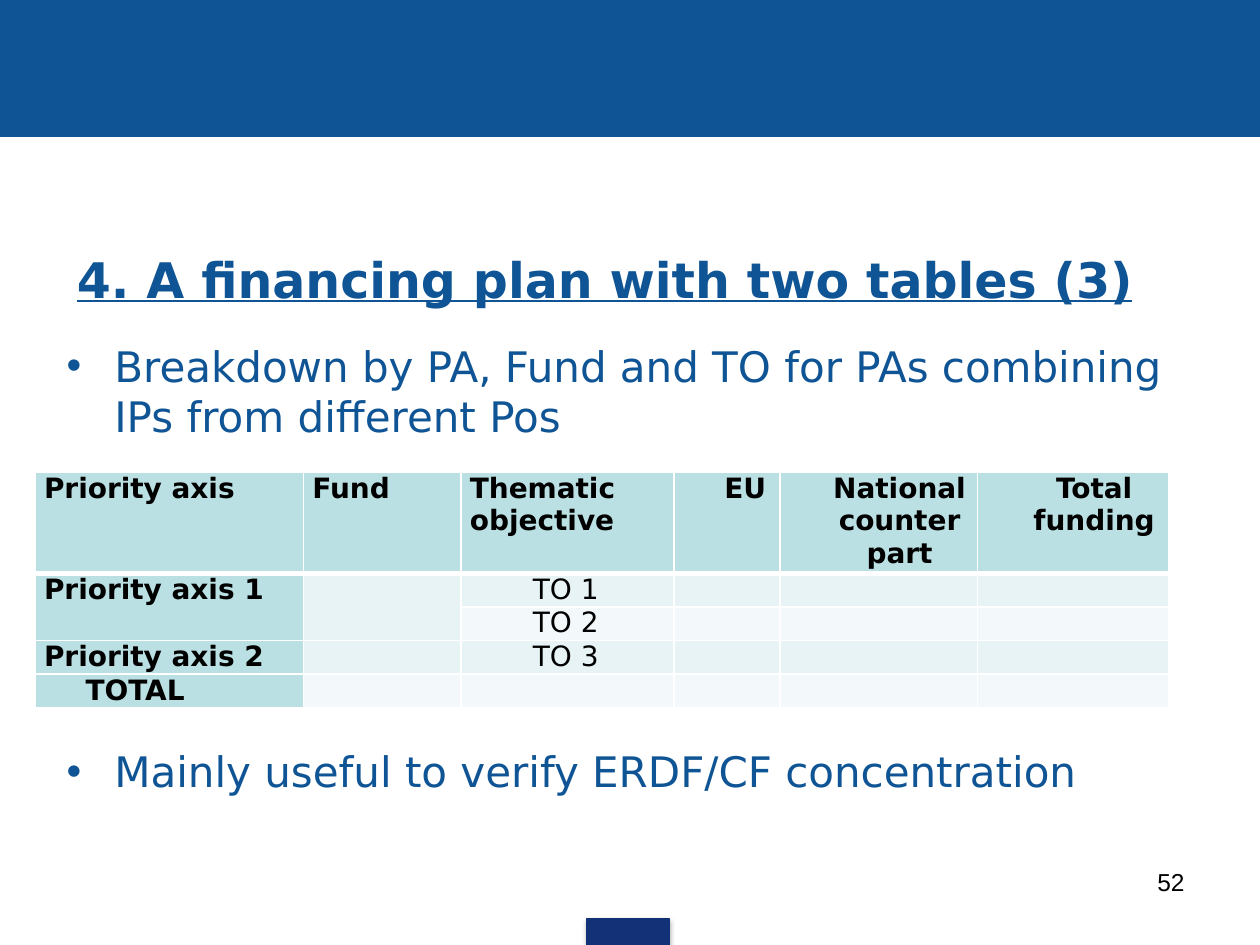
from typing import NamedTuple

import pptx
import pptx.dml.color
import pptx.enum.shapes
import pptx.enum.text
import pptx.oxml
import pptx.oxml.ns
import pptx.util
from lxml import etree

Inches = pptx.util.Inches
Pt = pptx.util.Pt
RGB = pptx.dml.color.RGBColor
Align = pptx.enum.text.PP_ALIGN
Anchor = pptx.enum.text.MSO_ANCHOR
qn = pptx.oxml.ns.qn
NS = pptx.oxml.ns.nsdecls("a")

BLUE = RGB(0x0F, 0x54, 0x94)
NAVY = RGB(0x13, 0x31, 0x76)
BLACK = RGB(0, 0, 0)
TEAL = RGB(0xBB, 0xE0, 0xE3)
PALE = RGB(0xE7, 0xF3, 0xF4)
FAINT = RGB(0xF3, 0xF9, 0xFA)
SANS = "DejaVu Sans"


class Bar(NamedTuple):
    left: float
    top: float
    width: float
    height: float
    color: RGB
    shadow: bool = False


class Entry(NamedTuple):
    text: str = ""
    indent: float = 0
    align: Align = Align.JUSTIFY


BARS = [
    Bar(0, 0, 10, 1.08, BLUE),
    Bar(4.66, 7.29, 0.65, 0.22, NAVY, True),
]
BULLETS = [
    ("Breakdown by PA, Fund and TO for PAs combining IPs from different Pos", 0),
    ("Mainly useful to verify ERDF/CF concentration", 174),
]
WIDTHS = [2.13, 1.25, 1.69, 0.84, 1.57, 1.52]
HEIGHTS = [0.78, 0.25, 0.26, 0.26, 0.25]
ROWS = [
    [Entry("Priority axis"), Entry("Fund"), Entry("Thematic objective", 0, Align.LEFT),
     Entry("EU", 0.33), Entry("National counterpart", 0.33, Align.CENTER),
     Entry("Total funding", 0.33, Align.CENTER)],
    [Entry("Priority axis 1"), Entry(), Entry("TO 1", 0.5)],
    [Entry(), Entry(), Entry("TO 2", 0.5)],
    [Entry("Priority axis 2"), Entry(), Entry("TO 3", 0.5)],
    [Entry("TOTAL", 0.33)],
]


def write(para, text: str, *, size: float, color: RGB = BLACK, font: str = SANS,
          bold: bool = False, line: bool = False, align: Align = Align.LEFT,
          indent: float = 0, hang: float = 0, before: float = 0,
          bullet: bool = False) -> None:
    props = para._p.get_or_add_pPr()
    props.set("marL", str(Inches(indent)))
    props.set("indent", str(-Inches(hang)))
    if bullet:
        props.append(pptx.oxml.parse_xml(
            f'<a:buClr {NS}><a:srgbClr val="{color}"/></a:buClr>'))
        props.append(pptx.oxml.parse_xml(f'<a:buFont {NS} typeface="Arial"/>'))
        props.append(pptx.oxml.parse_xml(f'<a:buChar {NS} char="•"/>'))
    para.alignment = align
    para.space_before = Pt(before)
    run = para.add_run()
    run.text = text
    run.font.size = Pt(size)
    run.font.name = font
    run.font.bold = bold
    run.font.underline = line
    run.font.color.rgb = color


def draw_bar(slide, bar: Bar) -> None:
    shape = slide.shapes.add_shape(
        pptx.enum.shapes.MSO_SHAPE.RECTANGLE,
        Inches(bar.left), Inches(bar.top), Inches(bar.width), Inches(bar.height))
    shape.fill.solid()
    shape.fill.fore_color.rgb = bar.color
    shape.line.color.rgb = bar.color
    shape.line.width = Pt(0.75)
    shape.shadow.inherit = False
    if bar.shadow:
        effects = shape._element.spPr.find(qn("a:effectLst"))
        effects.append(pptx.oxml.parse_xml(
            f'<a:outerShdw {NS} blurRad="{Pt(3.1)}" dist="{Pt(1.8)}" dir="5400000" '
            'rotWithShape="0"><a:srgbClr val="000000"><a:alpha val="35000"/>'
            '</a:srgbClr></a:outerShdw>'))


def add_box(slide, left: float, top: float, width: float, height: float):
    box = slide.shapes.add_textbox(
        Inches(left), Inches(top), Inches(width), Inches(height))
    box.text_frame.word_wrap = True
    return box.text_frame


def add_title(slide, text: str) -> None:
    title = slide.shapes.title
    title.left, title.top = Inches(0.51), Inches(1.75)
    title.width, title.height = Inches(9), Inches(0.93)
    frame = title.text_frame
    frame.auto_size = pptx.enum.text.MSO_AUTO_SIZE.NONE
    frame.vertical_anchor = Anchor.MIDDLE
    write(frame.paragraphs[0], text, size=28, color=BLUE, bold=True, line=True,
          indent=0.39, hang=0.39)


def set_edges(cell, top: float, bottom: float) -> None:
    props = cell._tc.get_or_add_tcPr()
    for side, width in (("L", 1), ("R", 1), ("T", top), ("B", bottom)):
        props.append(pptx.oxml.parse_xml(
            f'<a:ln{side} {NS} w="{Pt(width)}"><a:solidFill>'
            f'<a:srgbClr val="FFFFFF"/></a:solidFill></a:ln{side}>'))


def fill_cell(cell, entry: Entry, row: int, col: int) -> None:
    head = row == 0 or col == 0
    set_edges(cell, 3 if row == 1 else 1, 3 if row == 0 else 1)
    cell.fill.solid()
    cell.fill.fore_color.rgb = TEAL if head else PALE if row % 2 else FAINT
    cell.margin_left = cell.margin_right = Inches(0.07)
    cell.margin_top = cell.margin_bottom = 0
    para = cell.text_frame.paragraphs[0]
    if entry.text:
        write(para, entry.text, size=16, bold=head, align=entry.align,
              indent=entry.indent)
    else:
        # keeps an empty cell from stretching its row
        etree.SubElement(para._p, qn("a:endParaRPr"), sz="1200")


def add_plan(slide) -> None:
    table = slide.shapes.add_table(
        len(ROWS), len(WIDTHS), Inches(0.28), Inches(3.75),
        Inches(sum(WIDTHS)), Inches(sum(HEIGHTS))).table
    for col, width in zip(table.columns, WIDTHS):
        col.width = Inches(width)
    for row, height in zip(table.rows, HEIGHTS):
        row.height = Inches(height)
    for r, entries in enumerate(ROWS):
        for c in range(len(WIDTHS)):
            entry = entries[c] if c < len(entries) else Entry()
            fill_cell(table.cell(r, c), entry, r, c)
    for c in range(2):
        table.cell(1, c).merge(table.cell(2, c))


def main() -> None:
    deck = pptx.Presentation()
    deck.slide_width, deck.slide_height = Inches(10), Inches(7.5)
    slide = deck.slides.add_slide(deck.slide_layouts[5])
    for bar in BARS:
        draw_bar(slide, bar)
    add_title(slide, "4. A financing plan with two tables (3)")
    page = add_box(slide, 7.17, 6.83, 2.33, 0.52)
    write(page.paragraphs[0], "52", size=14, font="Arial", align=Align.RIGHT)
    body = add_box(slide, 0.43, 2.65, 9, 3.97)
    for i, (text, gap) in enumerate(BULLETS):
        para = body.add_paragraph() if i else body.paragraphs[0]
        write(para, text, size=24, color=BLUE, indent=0.38, hang=0.38,
              before=gap, bullet=True)
    add_plan(slide)
    deck.save("out.pptx")


if __name__ == "__main__":
    main()
